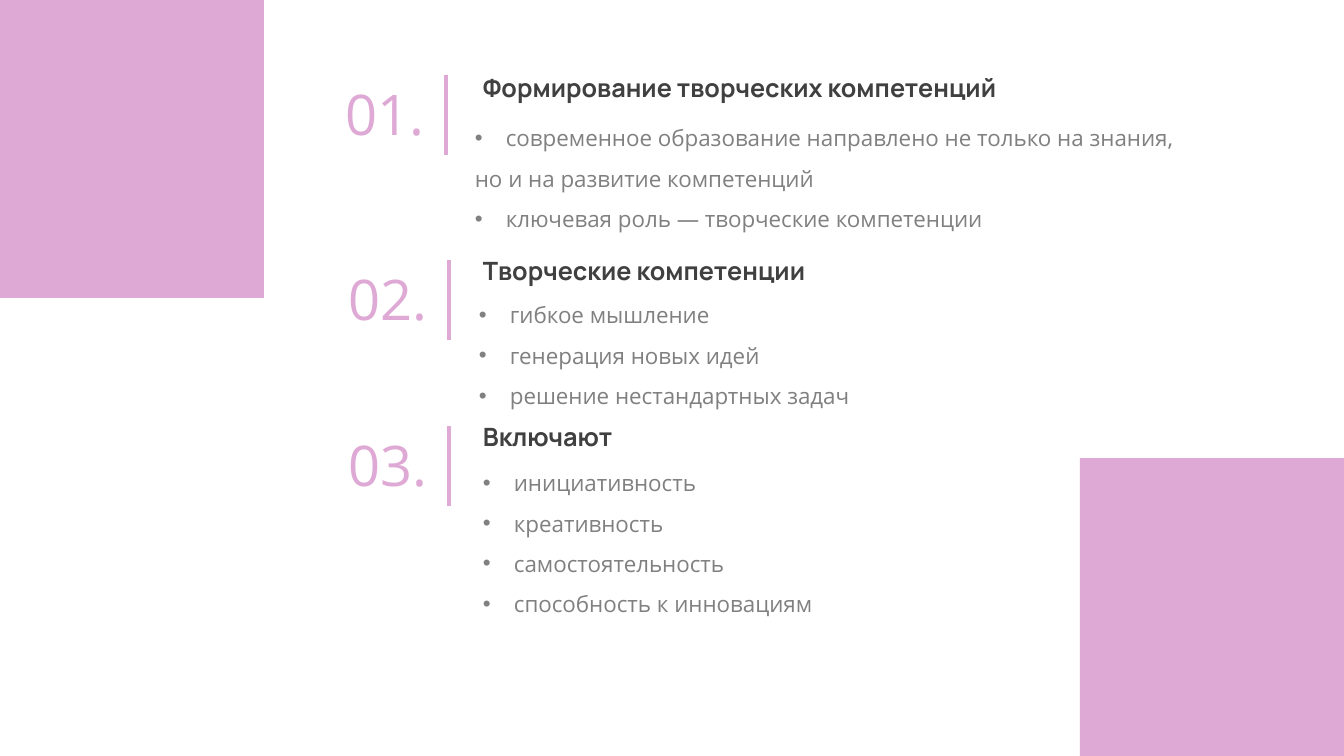
from pptx import Presentation
from pptx.dml.color import RGBColor
from pptx.enum.shapes import MSO_CONNECTOR, MSO_SHAPE
from pptx.oxml.ns import qn
from pptx.util import Pt
from lxml.etree import SubElement

# Content: number, title, lines as (text, bulleted)
SECTIONS = [
    ("01.", "Формирование творческих компетенций", [
        ("современное образование направлено не только на знания,", True),
        ("но и на развитие компетенций", False),
        ("ключевая роль — творческие компетенции", True)]),
    ("02.", "Творческие компетенции", [
        ("гибкое мышление", True),
        ("генерация новых идей", True),
        ("решение нестандартных задач", True)]),
    ("03.", "Включают", [
        ("инициативность", True),
        ("креативность", True),
        ("самостоятельность", True),
        ("способность к инновациям", True)]),
]

# Layout in px: bar x, bar top, title top, body left, body top, body width
PLACES = [
    (446, 75, 67, 465, 106, 798),
    (449, 260, 250, 469, 283, 641),
    (449, 426, 416, 473, 451, 641),
]
W, H = 1344, 756
BLOCK_W, BLOCK_H = 264, 298
BAR_H = 80
NUMBER_GAP, NUMBER_W, NUMBER_H = 110, 102, 78
TITLE_X, TITLE_W, TITLE_H = 473, 664, 40
LINE_H, INDENT = 40, 31

PINK = "DFA9D5"
NUMBER = dict(name="Open Sans", size=Pt(40), color=PINK)
TITLE = dict(name="Manrope", size=Pt(18), bold=True, color="404040")
BODY = dict(name="Open Sans", size=Pt(16), color="808080")


def px(n):
    return round(n * 914400 / 100.8)


def rgb(hex_color):
    return RGBColor.from_string(hex_color)


def add_bullet(p):
    pPr = p._p.get_or_add_pPr()
    pPr.set("marL", str(px(INDENT)))
    pPr.set("indent", str(-px(INDENT)))
    SubElement(pPr, qn("a:buFont"), typeface="Arial")
    SubElement(pPr, qn("a:buChar"), char="•")


def add_text(s, box, lines, fmt, spacing=None):
    tf = s.shapes.add_textbox(*map(px, box)).text_frame
    tf.word_wrap = True
    for i, (text, bulleted) in enumerate(lines):
        p = tf.add_paragraph() if i else tf.paragraphs[0]
        if spacing:
            p.line_spacing = spacing
        if bulleted:
            add_bullet(p)
        r = p.add_run()
        r.text = text
        for key, value in fmt.items():
            if key == "color":
                r.font.color.rgb = rgb(value)
            else:
                setattr(r.font, key, value)


prs = Presentation()
prs.slide_width, prs.slide_height = px(W), px(H)
s = prs.slides.add_slide(prs.slide_layouts[6])

# Corner blocks
for x, y in [(0, 0), (W - BLOCK_W, H - BLOCK_H)]:
    sp = s.shapes.add_shape(MSO_SHAPE.RECTANGLE, *map(px, (x, y, BLOCK_W, BLOCK_H)))
    sp.shadow.inherit = False
    sp.fill.solid()
    sp.fill.fore_color.rgb = rgb(PINK)
    sp.line.fill.background()

# Numbered sections
for (number, title, lines), place in zip(SECTIONS, PLACES):
    bar_x, top, title_y, body_x, body_y, body_w = place
    bar = s.shapes.add_connector(
        MSO_CONNECTOR.STRAIGHT, *map(px, (bar_x, top, bar_x, top + BAR_H)))
    bar.line.color.rgb = rgb(PINK)
    bar.line.width = Pt(2.25)
    SubElement(bar._element.spPr, qn("a:effectLst"))

    add_text(s, (bar_x - NUMBER_GAP, top, NUMBER_W, NUMBER_H), [(number, False)], NUMBER)
    add_text(s, (TITLE_X, title_y, TITLE_W, TITLE_H), [(title, False)], TITLE)
    add_text(s, (body_x, body_y, body_w, LINE_H * len(lines) + 8), lines, BODY, 1.5)

prs.save("out.pptx")
